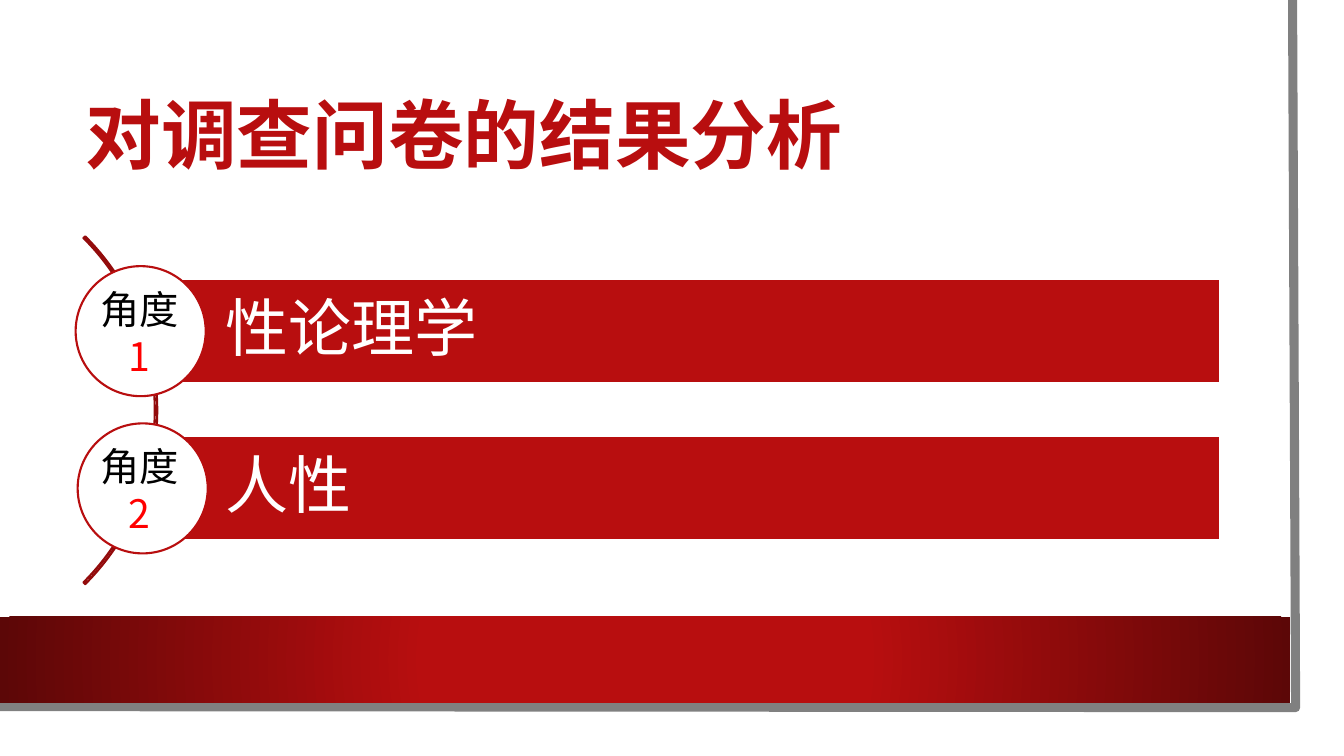
from lxml import etree
from pptx import Presentation
from pptx.dml.color import RGBColor
from pptx.enum.shapes import MSO_SHAPE
from pptx.enum.text import MSO_ANCHOR, MSO_AUTO_SIZE, PP_ALIGN
from pptx.oxml import parse_xml
from pptx.oxml.ns import nsdecls, qn
from pptx.util import Inches, Pt

RECT, OVAL, ARC = MSO_SHAPE.RECTANGLE, MSO_SHAPE.OVAL, MSO_SHAPE.BLOCK_ARC
LEFT, CENTER = PP_ALIGN.LEFT, PP_ALIGN.CENTER
MIDDLE = MSO_ANCHOR.MIDDLE
TITLE_ONLY = 5
WIDTH, HEIGHT = 13.33, 7.5
MARGIN = 0.75
SANS, BAR_SANS = "Noto Sans CJK SC", "Noto Sans CJK JP"
COLORS = {"red": "B80E0F", "arc": "930B0C", "dark": "5C0707", "edge": "808080",
          "number": "FF0000", "white": "FFFFFF", "black": "000000"}
ANGLES = [("1", "性论理学", 0.75), ("2", "人性", 0.77)]


def color(key):
    return RGBColor.from_string(COLORS[key])


def inches(*lengths):
    return [Inches(length) for length in lengths]


def paint(shape, fill=None, line=None, weight=1.5):
    shape.shadow.inherit = False
    if fill:
        shape.fill.solid()
        shape.fill.fore_color.rgb = color(fill)
    else:
        shape.fill.background()
    if line:
        shape.line.color.rgb = color(line)
        shape.line.width = Pt(weight)
    else:
        shape.line.fill.background()


def add_block(slide, kind, box, fill=None, line=None):
    block = slide.shapes.add_shape(kind, *inches(*box))
    paint(block, fill, line)
    return block


def write(paragraph, text, size, ink, face=SANS, align=LEFT, bold=False):
    run = paragraph.add_run()
    run.text = text
    paragraph.alignment = align
    font = paragraph.font
    font.size, font.name, font.bold = Pt(size), face, bold
    font.color.rgb = color(ink)
    east_asian = etree.SubElement(run._r.get_or_add_rPr(), qn("a:ea"))
    east_asian.set("typeface", face)


def add_frame(slide):
    add_block(slide, RECT, (0, 0, 13.1, 7.27), "white")
    outline = slide.shapes.build_freeform(*inches(12.82, 0), scale=1.0)
    outline.add_line_segments([inches(12.85, 7.02), inches(-0.03, 7.01)], close=False)
    paint(outline.convert_to_shape(), line="edge", weight=6.5)
    band = add_block(slide, RECT, (0, 6.12, 12.8, 0.85), "red")
    properties = band._element.spPr
    gradient = parse_xml(
        f'<a:gradFill {nsdecls("a")} rotWithShape="1"><a:gsLst>'
        f'<a:gs pos="34000"><a:srgbClr val="{COLORS["red"]}"/></a:gs>'
        f'<a:gs pos="100000"><a:srgbClr val="{COLORS["dark"]}"/></a:gs></a:gsLst>'
        '<a:path path="circle"><a:fillToRect l="50000" t="50000" r="50000" b="50000"/>'
        '</a:path></a:gradFill>')
    properties.replace(properties.find(qn("a:solidFill")), gradient)


def add_title(slide, box, text):
    title = slide.shapes.title
    title.left, title.top, title.width, title.height = inches(*box)
    frame = title.text_frame
    frame.word_wrap = True
    frame.auto_size = MSO_AUTO_SIZE.NONE
    frame.vertical_anchor = MIDDLE
    heading = frame.paragraphs[0]
    heading.line_spacing = 0.9
    write(heading, text, 54, "red", bold=True)


def add_bar(slide, box, topic):
    bar = add_block(slide, RECT, box, "red", "white")
    frame = bar.text_frame
    frame.word_wrap = True
    frame.vertical_anchor = MIDDLE
    frame.margin_left = Inches(0.82)
    frame.margin_top = frame.margin_right = frame.margin_bottom = Inches(0.12)
    frame.paragraphs[0].line_spacing = 0.9
    write(frame.paragraphs[0], topic, 45, "white", BAR_SANS)


def add_label(slide, box, number):
    label = slide.shapes.add_textbox(*inches(*box))
    frame = label.text_frame
    frame.word_wrap = False
    frame.auto_size = MSO_AUTO_SIZE.SHAPE_TO_FIT_TEXT
    write(frame.paragraphs[0], "角度", 28, "black")
    write(frame.add_paragraph(), number, 28, "number", align=CENTER)


def add_angles(slide, top, pitch):
    arc = add_block(slide, ARC, (-3.32, 1.63, 4.88, 4.88), line="arc")
    for index, value in enumerate((189, 27, 0.005)):
        arc.adjustments[index] = value
    for row, (number, topic, circle_left) in enumerate(ANGLES):
        y = top + row * pitch
        add_bar(slide, (1.42, y + 0.13, 10.68, 1.03), topic)
        add_block(slide, OVAL, (circle_left, y, 1.29, 1.29), "white", "red")
        add_label(slide, (0.9, y + 0.14, 0.99, 1.04), number)


def main():
    deck = Presentation()
    deck.slide_width, deck.slide_height = inches(WIDTH, HEIGHT)
    slide = deck.slides.add_slide(deck.slide_layouts[TITLE_ONLY])
    add_frame(slide)
    add_title(slide, (MARGIN, MARGIN, 11.37, 1.26), "对调查问卷的结果分析")
    title = slide.shapes.title._element
    title.getparent().append(title)
    add_angles(slide, top=2.64, pitch=1.56)
    deck.save("out.pptx")


if __name__ == "__main__":
    main()
